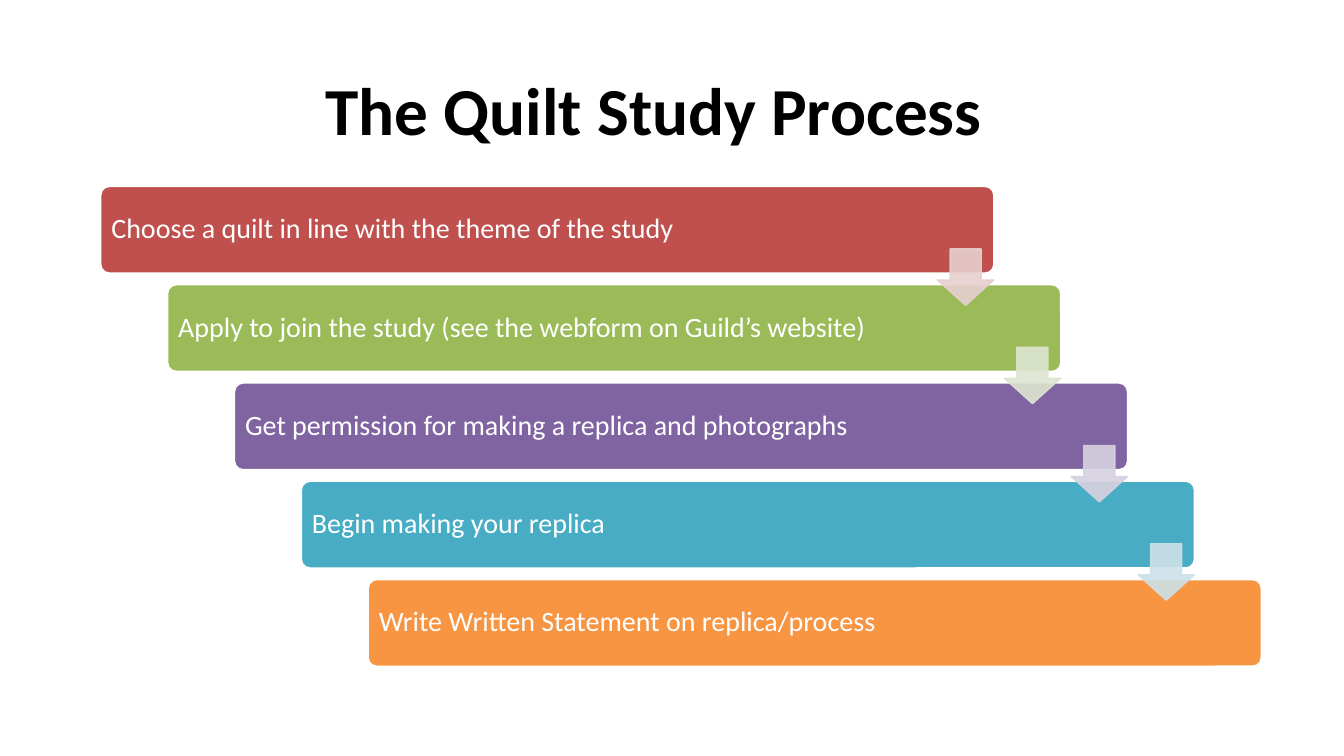
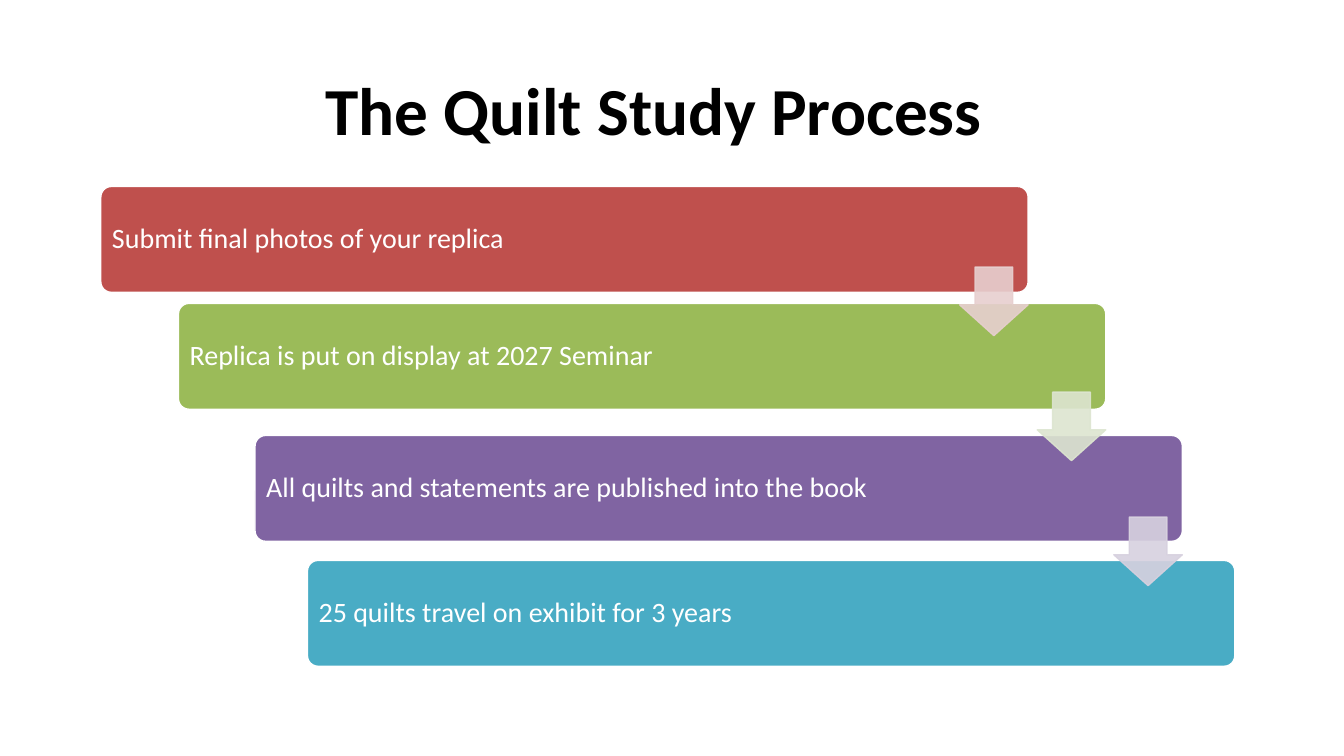
from pptx import Presentation
from pptx.dml.color import RGBColor
from pptx.enum.shapes import MSO_SHAPE as Preset
from pptx.enum.text import MSO_ANCHOR as Anchor, MSO_AUTO_SIZE as AutoSize, PP_ALIGN as Align
from pptx.oxml.ns import qn
from pptx.util import Inches, Pt


def color(hex_code):
    return RGBColor.from_string(hex_code)


def assign(target, values):
    for key, value in values.items():
        setattr(target, key, value)


deck = Presentation()
assign(deck, {"slide_width": Inches(13.333), "slide_height": Inches(7.5)})
COL, ROW = deck.slide_width / 40, deck.slide_height / 30

HEADING = "The Quilt Study Process"
STEP_COLORS = ["BF504D", "9BBB59", "8064A2", "49ACC5", "F79543"]
ARROW_COLORS = ["E7CFCF", "DDE5D0", "D7D1DF", "CDE1E8"]
ARROW_OPACITY = "90000"

HEADING_PLACE = {"left": int(2.75 * COL), "top": int(1.6 * ROW),
                 "width": int(34.5 * COL), "height": int(5.8 * ROW)}
HEADING_FRAME = {"margin_left": int(6.94 * COL), "vertical_anchor": Anchor.MIDDLE,
                 "auto_size": AutoSize.NONE, "word_wrap": True}
HEADING_FONT = {"name": "Calibri", "size": Pt(48), "bold": True}
STEP_FRAME = {"margin_left": int(0.24 * COL), "margin_right": int(0.24 * COL),
              "margin_top": int(0.32 * ROW), "margin_bottom": int(0.32 * ROW),
              "vertical_anchor": Anchor.MIDDLE, "word_wrap": True}
STEP_FONT = {"name": "Calibri", "size": Pt(20), "bold": False}
PARAGRAPH = {"alignment": Align.LEFT, "line_spacing": 0.9}

STAIRCASES = [
    {
        "steps": [
            "Choose a quilt in line with the theme of the study",
            "Apply to join the study (see the webform on Guild’s website)",
            "Get permission for making a replica and photographs",
            "Begin making your replica",
            "Write Written Statement on replica/process",
        ],
        "lefts": [3 + 1.99 * i for i in range(5)],
        "tops": [7.4 + 3.9 * i for i in range(5)],
        "width": 26.58, "height": 3.44,
        "arrow_size": 2.24, "arrow_top": 9.88, "arrow_gap": 3.9,
    },
    {
        "steps": [
            "Submit final photos of your replica",
            "Replica is put on display at 2027 Seminar",
            "All quilts and statements are published into the book",
            "25 quilts travel on exhibit for 3 years",
        ],
        "lefts": [3, 5.31, 7.59, 9.15],
        "tops": [7.4, 12.04, 17.28, 22.24],
        "width": 27.6, "height": 4.2,
        "arrow_size": 2.72, "arrow_top": 10.6, "arrow_gap": 4.96,
    },
]

title_only = deck.slide_layouts[5]
assign(title_only.placeholders[0], HEADING_PLACE)

for stairs in STAIRCASES:
    slide = deck.slides.add_slide(title_only)
    heading = slide.shapes.title
    heading.text_frame.text = HEADING
    texts = [(heading, HEADING_FRAME, HEADING_FONT, "000000")]

    width, height = stairs["width"] * COL, stairs["height"] * ROW
    side = stairs["arrow_size"] * ROW
    parts = []
    for left, top, hue, words in zip(stairs["lefts"], stairs["tops"], STEP_COLORS, stairs["steps"]):
        parts.append((Preset.ROUNDED_RECTANGLE, (left * COL, top * ROW, width, height),
                      [0.1], hue, "FFFFFF", words))
    for i, (left, hue) in enumerate(zip(stairs["lefts"][:-1], ARROW_COLORS)):
        arrow_top = (stairs["arrow_top"] + i * stairs["arrow_gap"]) * ROW
        parts.append((Preset.DOWN_ARROW, (left * COL + width - side, arrow_top, side, side),
                      [0.55, 0.45], hue, hue, None))

    for preset, place, bends, hue, edge, words in parts:
        part = slide.shapes.add_shape(preset, *map(int, place))
        for i, bend in enumerate(bends):
            part.adjustments[i] = bend
        part.shadow.inherit = False
        part.fill.solid()
        part.fill.fore_color.rgb = color(hue)
        part.line.color.rgb = color(edge)
        part.line.width = Pt(1)
        if words:
            part.text_frame.text = words
            texts.append((part, STEP_FRAME, STEP_FONT, "FFFFFF"))
        else:
            for tint in part._element.spPr.iter(qn("a:srgbClr")):
                tint.append(tint.makeelement(qn("a:alpha"), {"val": ARROW_OPACITY}))

    for holder, frame, font, ink in texts:
        assign(holder.text_frame, frame)
        paragraph = holder.text_frame.paragraphs[0]
        assign(paragraph, PARAGRAPH)
        assign(paragraph.runs[0].font, font)
        paragraph.runs[0].font.color.rgb = color(ink)

deck.save("out.pptx")
